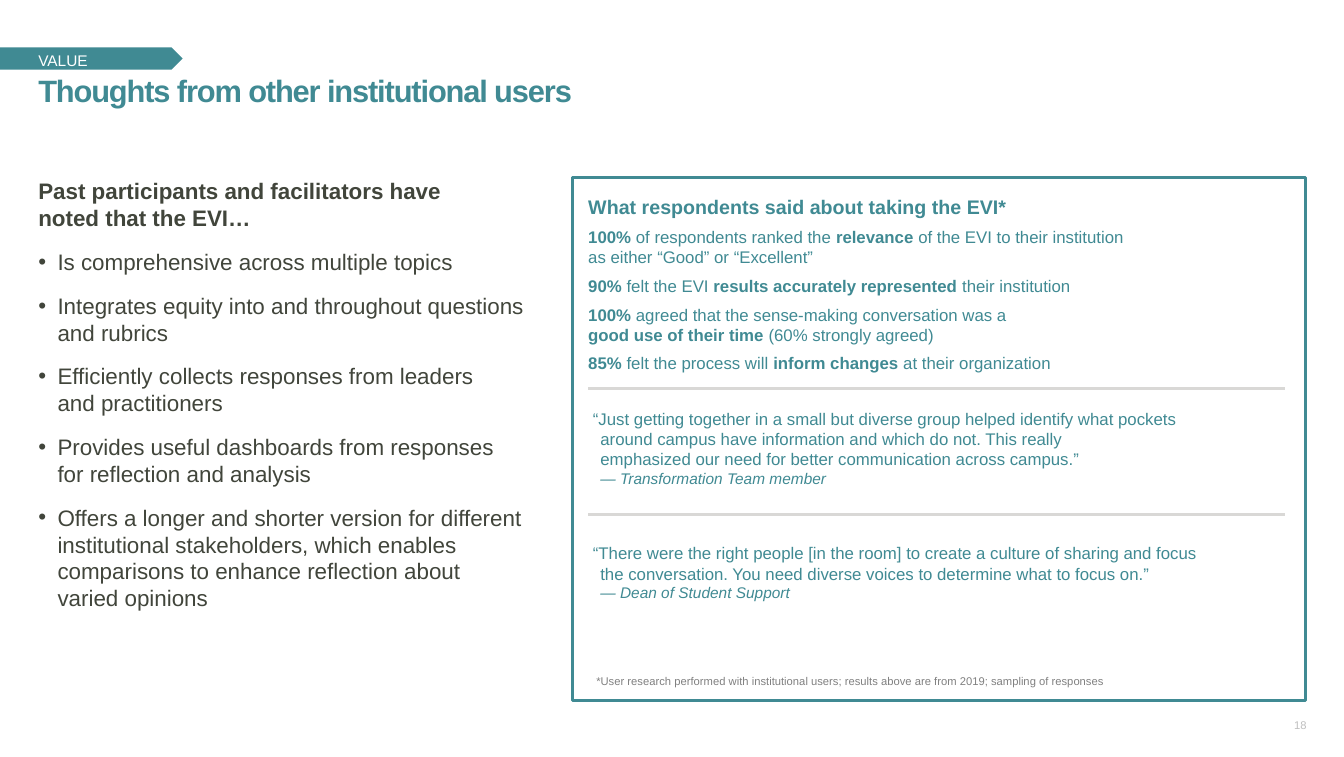
from lxml.etree import SubElement
from pptx import Presentation
from pptx.dml.color import RGBColor
from pptx.enum.shapes import MSO_CONNECTOR, MSO_SHAPE
from pptx.enum.text import MSO_ANCHOR, PP_ALIGN
from pptx.oxml.ns import qn
from pptx.util import Pt

TEAL, DARK, RULE = "408A93", "41453B", "D9D8D6"
BOLD = {"bold": True}
CITE = {"size": Pt(11), "italic": True}
EDGE, TOP, INNER = 27.36, 126.72, 419.76

TRAITS = [
    "Is comprehensive across multiple topics",
    "Integrates equity into and throughout questions \nand rubrics",
    "Efficiently collects responses from leaders \nand practitioners",
    "Provides useful dashboards from responses \nfor reflection and analysis",
    "Offers a longer and shorter version for different institutional "
    "stakeholders, which enables comparisons to enhance reflection about \n"
    "varied opinions",
]
STATS = [
    "|100%| of respondents ranked the |relevance| of the EVI to their "
    "institution \nas either “Good” or “Excellent”",
    "|90% |felt the EVI |results accurately represented |their institution",
    "|100% |agreed that the sense-making conversation was a \n"
    "|good use of their time |(60% strongly agreed)",
    "|85% |felt the process will |inform changes |at their organization",
]
QUOTES = [
    (291.6, 452.16, 54,
     " “Just getting together in a small but diverse group helped identify "
     "what pockets around campus have information and which do not. This "
     "really\nemphasized our need for better communication across campus.”\n"
     "|— Transformation Team member"),
    (387.36, 443.52, 39.6,
     " “There were the right people [in the room] to create a culture of "
     "sharing and focus the conversation. You need diverse voices to "
     "determine what to focus on.”\n|— Dean of Student Support"),
]


def color(code):
    return RGBColor.from_string(code)


def assign(item, values):
    for name, value in values.items():
        setattr(item, name, value)


def add_box(slide, left, top, width, height, **values):
    frame = slide.shapes.add_textbox(
        Pt(left), Pt(top), Pt(width), Pt(height)).text_frame
    base = {"margin_left": 0, "margin_top": 0, "margin_right": 0,
            "margin_bottom": 0, "word_wrap": True}
    assign(frame, base | values)
    return frame


def add_para(frame, text, size, code, accent=BOLD, base=None, indent=0,
             bullet=False, **values):
    first = frame.paragraphs[0]
    para = frame.add_paragraph() if first.runs else first
    assign(para, values)
    props = para._p.get_or_add_pPr()
    if indent:
        props.set("marL", str(Pt(indent)))
        props.set("indent", str(-Pt(indent)))
    if bullet:
        SubElement(props, qn("a:buFont")).set("typeface", "Arial")
        SubElement(props, qn("a:buChar")).set("char", "•")
    plain = {"name": "Arial", "size": Pt(size), "bold": False} | (base or {})
    for order, piece in enumerate(text.split("|")):
        style = plain | accent if order % 2 else plain
        for row, line in enumerate(piece.split("\n")):
            if row:
                para.add_line_break()
            if line:
                run = para.add_run()
                run.text = line
                assign(run.font, style)
                run.font.color.rgb = color(code)
    return para


def add_tag(slide):
    top, base, tip = 33.84, 49.68, 130.32
    build = slide.shapes.build_freeform(0, Pt(top))
    points = [(122.4, top), (tip, (top + base) / 2), (122.4, base), (0, base)]
    build.add_line_segments([(Pt(x), Pt(y)) for x, y in points], close=True)
    tag = build.convert_to_shape()
    tag.shadow.inherit = False
    tag.fill.solid()
    tag.fill.fore_color.rgb = color(TEAL)
    tag.line.fill.background()


def add_panel(slide):
    panel = slide.shapes.add_shape(
        MSO_SHAPE.RECTANGLE, Pt(408.24), Pt(TOP), Pt(523.44), Pt(372.96))
    panel.shadow.inherit = False
    panel.fill.background()
    panel.line.color.rgb = color(TEAL)
    panel.line.width = Pt(2.25)


def add_rule(slide, y):
    rule = slide.shapes.add_connector(
        MSO_CONNECTOR.STRAIGHT, Pt(INNER), Pt(y), Pt(917.28), Pt(y))
    rule.line.color.rgb = color(RULE)
    rule.line.width = Pt(2.25)
    SubElement(rule._element.spPr, qn("a:effectLst"))


def main():
    deck = Presentation()
    assign(deck, {"slide_width": Pt(959.04), "slide_height": Pt(540)})
    slide = deck.slides.add_slide(deck.slide_layouts[6])
    add_tag(slide)
    add_panel(slide)

    label = add_box(slide, EDGE, 33.12, 904.32, 16.56,
                    vertical_anchor=MSO_ANCHOR.BOTTOM)
    add_para(label, "VALUE", 11, "FFFFFF", space_before=Pt(2))

    title = add_box(slide, EDGE, 51.12, 904.32, 22.32)
    head = add_para(title, "Thoughts from other institutional users", 22,
                    TEAL, base=BOLD, space_before=Pt(4))
    head.runs[0].font._element.set("spc", "-80")

    number = add_box(slide, 922.32, 511.92, 10.08, 10.08, word_wrap=False,
                     vertical_anchor=MSO_ANCHOR.MIDDLE)
    add_para(number, "18", 8, "BFBFBF", alignment=PP_ALIGN.RIGHT)

    body = add_box(slide, EDGE, TOP, 354.24, 365.04)
    add_para(body, "Past participants and facilitators have \n"
             "noted that the EVI…", 16, DARK, base=BOLD, space_before=Pt(12))
    for trait in TRAITS:
        add_para(body, trait, 16, DARK, indent=13.68, bullet=True,
                 space_before=Pt(12))

    survey = add_box(slide, INNER, 138.96, 433.44, 143.28)
    add_para(survey, "What respondents said about taking the EVI*", 14,
             TEAL, base=BOLD, space_before=Pt(6))
    for stat in STATS:
        add_para(survey, stat, 12, TEAL, space_before=Pt(6))

    for top, width, height, text in QUOTES:
        quote = add_box(slide, INNER, top, width, height)
        add_para(quote, text, 12, TEAL, accent=CITE, indent=8.64,
                 space_before=Pt(6))

    note = add_box(slide, 425.52, 478.8, 480.24, 10.08)
    add_para(note, "*User research performed with institutional users; "
             "results above are from 2019; sampling of responses", 8,
             "808080", line_spacing=1.2)

    for y in (277.2, 367.2):
        add_rule(slide, y)
    deck.save("out.pptx")


if __name__ == "__main__":
    main()
